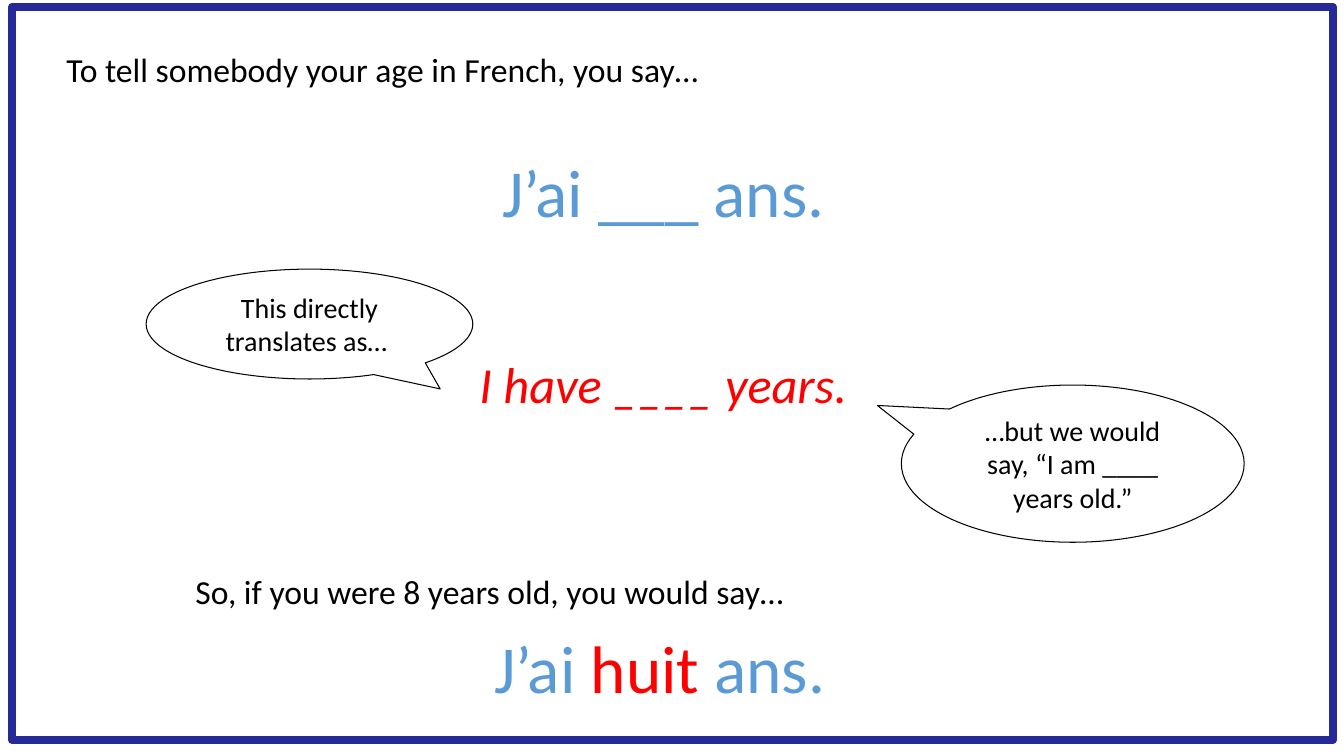
"""Build a slide that teaches how to say your age in French."""
from dataclasses import dataclass

from pptx import Presentation
from pptx.dml.color import RGBColor
from pptx.enum.shapes import MSO_SHAPE
from pptx.enum.text import MSO_ANCHOR, PP_ALIGN
from pptx.util import Emu, Pt

RECTANGLE = MSO_SHAPE.RECTANGLE
CALLOUT = MSO_SHAPE.OVAL_CALLOUT
TOP, MIDDLE = MSO_ANCHOR.TOP, MSO_ANCHOR.MIDDLE
LEFT, CENTER = PP_ALIGN.LEFT, PP_ALIGN.CENTER
EMU_PER_PX = 9144


@dataclass(frozen=True)
class Theme:
    """Hold the colours, type sizes and line widths of the slide."""
    font: str = "Calibri"
    black: str = "000000"
    blue: str = "5B9BD5"
    red: str = "FF0000"
    navy: str = "252A98"
    phrase_size: int = 48
    translation_size: int = 36
    prompt_size: int = 24
    callout_size: int = 20
    frame_width: float = 6
    callout_width: float = 0.75


THEME = Theme()


def px(length):
    """Turn a length in px into EMU."""
    return Emu(length * EMU_PER_PX)


def write_text(shape, runs, size, align, anchor, italic=False, spacing=1.0):
    """Write one paragraph of (text, colour) runs into a shape."""
    frame = shape.text_frame
    frame.word_wrap = True
    frame.vertical_anchor = anchor
    paragraph = frame.paragraphs[0]
    paragraph.alignment = align
    paragraph.line_spacing = spacing
    for text, colour in runs:
        run = paragraph.add_run()
        run.text = text
        run.font.name = THEME.font
        run.font.size = Pt(size)
        run.font.italic = italic
        run.font.color.rgb = RGBColor.from_string(colour)


def add_phrase(slide, box, runs, size, italic=False):
    """Add a large centred phrase."""
    shape = slide.shapes.add_textbox(*map(px, box))
    write_text(shape, runs, size, CENTER, MIDDLE, italic, 0.9)


def add_prompt(slide, box, text):
    """Add a left-aligned sentence that leads to a phrase."""
    shape = slide.shapes.add_textbox(*map(px, box))
    write_text(shape, [(text, THEME.black)], THEME.prompt_size, LEFT, TOP)


def add_outline(slide, kind, box, colour, width):
    """Add an unfilled outlined shape and return it."""
    shape = slide.shapes.add_shape(kind, *map(px, box))
    shape.shadow.inherit = False
    shape.fill.background()
    shape.line.color.rgb = RGBColor.from_string(colour)
    shape.line.width = Pt(width)
    return shape


def add_callout(slide, box, tip, text):
    """Add a speech bubble whose tip is given relative to its centre."""
    shape = add_outline(slide, CALLOUT, box, THEME.black, THEME.callout_width)
    for index, offset in enumerate(tip):
        shape.adjustments[index] = offset
    write_text(shape, [(text, THEME.black)], THEME.callout_size, CENTER, TOP)


def build_age_slide(slide):
    """Place the frame, prompts, phrases and callouts."""
    add_phrase(slide, (83, 122, 1150, 145),
               [("J’ai ___ ans.", THEME.blue)], THEME.phrase_size)
    add_phrase(slide, (307, 608, 695, 117),
               [("J’ai ", THEME.blue), ("huit", THEME.red), (" ans.", THEME.blue)],
               THEME.phrase_size)
    add_outline(slide, RECTANGLE, (12, 7, 1310, 727), THEME.navy, THEME.frame_width)
    add_prompt(slide, (56, 44, 1098, 50),
               "To tell somebody your age in French, you say…")
    add_phrase(slide, (83, 321, 1150, 127),
               [("I have ____ years.", THEME.red)], THEME.translation_size, italic=True)
    add_callout(slide, (145, 267, 324, 109), (0.4, 0.59),
                "This directly translates as… ")
    add_callout(slide, (894, 382, 340, 156), (-0.57, -0.37),
                "…but we would say, “I am ____ years old.”")
    add_prompt(slide, (184, 561, 1098, 50),
               "So, if you were 8 years old, you would say…")


def main():
    """Create and save the presentation."""
    presentation = Presentation()
    presentation.slide_width = px(1333)
    presentation.slide_height = px(750)
    build_age_slide(presentation.slides.add_slide(presentation.slide_layouts[6]))
    presentation.save("out.pptx")


if __name__ == "__main__":
    main()
